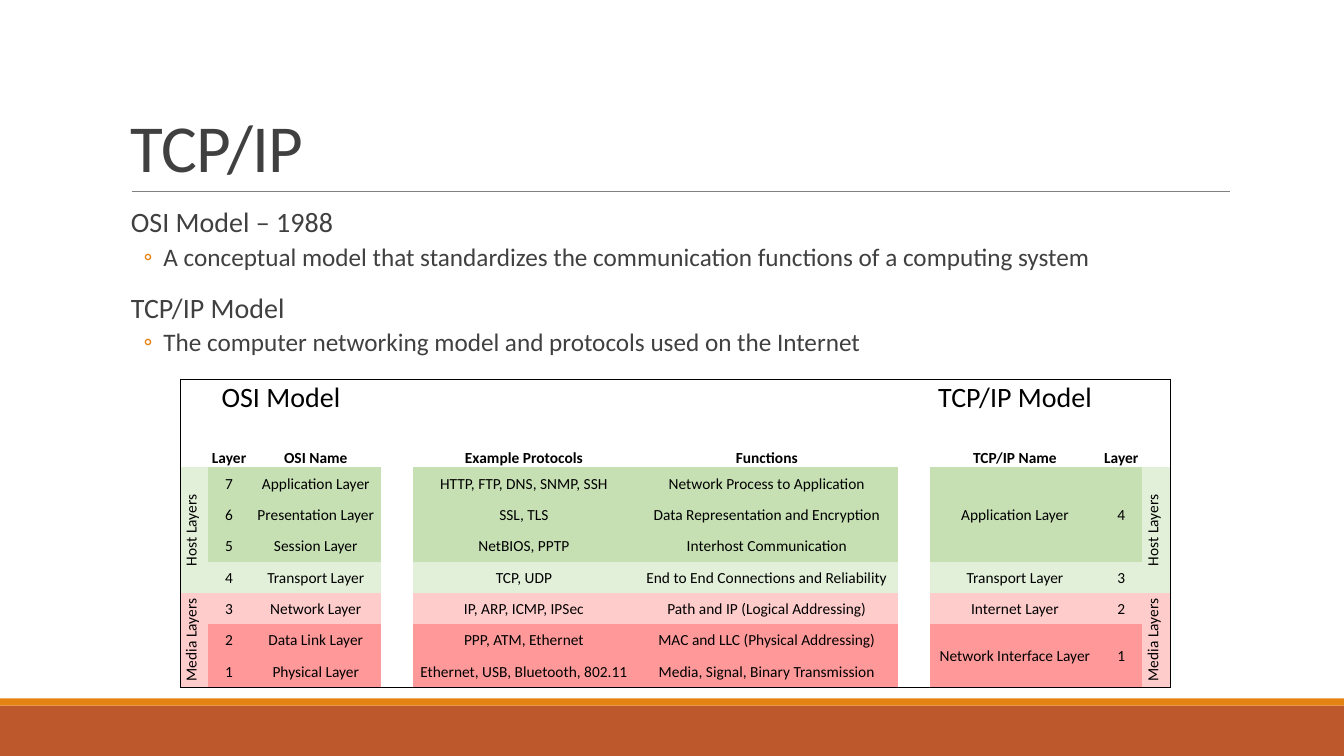
import lxml.etree
import pptx
import pptx.dml.color
import pptx.enum.shapes
import pptx.enum.text
import pptx.oxml.ns
import pptx.util

Cm, Pt, qn = pptx.util.Cm, pptx.util.Pt, pptx.oxml.ns.qn
ANCHOR, ALIGN = pptx.enum.text.MSO_ANCHOR, pptx.enum.text.PP_ALIGN

FONT = "Calibri"
COLORS = {
    "footer": "BD582C", "accent": "E48312", "rule": "808080",
    "text": "404040", "table": "000000",
    "host": "C6E0B4", "host light": "E2EFD9",
    "media light": "FFCCCC", "media": "FF9999",
}
TITLE = "TCP/IP"
BODY = [
    ("OSI Model – 1988",
     "A conceptual model that standardizes the communication functions of a computing system"),
    ("TCP/IP Model",
     "The computer networking model and protocols used on the Internet"),
]

# Table columns: side label, OSI part, gap, details, gap, TCP/IP part, side label
COL_WIDTHS = [0.69, 1.07, 3.3, 0.79, 5.61, 6.63, 0.79, 4.3, 1.06, 0.71]
HEAD_HEIGHTS = [0.91, 0.53, 0.79]
LAYER_HEIGHT = 0.79
MODEL_NAMES = {0: "OSI Model", 7: "TCP/IP Model"}
HEADINGS = {1: "Layer", 2: "OSI Name", 4: "Example Protocols",
            5: "Functions", 7: "TCP/IP Name", 8: "Layer"}
OSI_LAYERS = [  # name, protocols, function, band
    ("Application Layer", "HTTP, FTP, DNS, SNMP, SSH", "Network Process to Application", "host"),
    ("Presentation Layer", "SSL, TLS", "Data Representation and Encryption", "host"),
    ("Session Layer", "NetBIOS, PPTP", "Interhost Communication", "host"),
    ("Transport Layer", "TCP, UDP", "End to End Connections and Reliability", "host light"),
    ("Network Layer", "IP, ARP, ICMP, IPSec", "Path and IP (Logical Addressing)", "media light"),
    ("Data Link Layer", "PPP, ATM, Ethernet", "MAC and LLC (Physical Addressing)", "media"),
    ("Physical Layer", "Ethernet, USB, Bluetooth, 802.11", "Media, Signal, Binary Transmission", "media"),
]
TCP_LAYERS = [  # name, OSI layers covered, band
    ("Application Layer", 3, "host"),
    ("Transport Layer", 1, "host light"),
    ("Internet Layer", 1, "media light"),
    ("Network Interface Layer", 2, "media"),
]
SIDES = [("Host Layers", 4, "host light"), ("Media Layers", 3, "media light")]


def rgb(name):
    return pptx.dml.color.RGBColor.from_string(COLORS[name])


def add_run(p, text, size, color, bold=False):
    r = p.add_run()
    r.text = text
    r.font.name, r.font.size, r.font.bold = FONT, Pt(size), bold
    r.font.color.rgb = rgb(color)
    return r


def add_bar(s, top, height, color):
    sp = s.shapes.add_shape(pptx.enum.shapes.MSO_SHAPE.RECTANGLE,
                            0, Cm(top), Cm(33.87), Cm(height))
    sp.shadow.inherit = False
    sp.fill.solid()
    sp.fill.fore_color.rgb = rgb(color)
    sp.line.fill.background()


def add_rule(s):
    line = s.shapes.add_connector(pptx.enum.shapes.MSO_CONNECTOR.STRAIGHT,
                                  Cm(3.32), Cm(4.82), Cm(31), Cm(4.82))
    line.line.color.rgb = rgb("rule")
    line.line.width = Pt(0.5)
    lxml.etree.SubElement(line._element.spPr, qn("a:effectLst"))


def add_title(s):
    tf = s.shapes.add_textbox(Cm(3.05), Cm(0.79), Cm(27.94), Cm(4.03)).text_frame
    tf.word_wrap = True
    tf.vertical_anchor = ANCHOR.BOTTOM
    p = tf.paragraphs[0]
    p.line_spacing = 0.85
    r = add_run(p, TITLE, 48, "text")
    r.font._element.set("spc", "-50")


def add_body_line(p, text, size, before, after, left, bullet=None):
    p.line_spacing = 0.9
    p.space_before, p.space_after = Pt(before), Pt(after)
    add_run(p, text, size, "text")
    pPr = p._p.get_or_add_pPr()
    pPr.set("marL", str(Cm(left)))
    if bullet:
        pPr.set("indent", str(Cm(-0.5)))
        color = lxml.etree.SubElement(pPr, qn("a:buClr"))
        lxml.etree.SubElement(color, qn("a:srgbClr"), val=COLORS["accent"])
        lxml.etree.SubElement(pPr, qn("a:buFont"), typeface=FONT)
        lxml.etree.SubElement(pPr, qn("a:buChar"), char=bullet)


def add_body(s):
    tf = s.shapes.add_textbox(Cm(3.05), Cm(5.13), Cm(27.94), Cm(11.18)).text_frame
    tf.word_wrap = True
    tf.margin_left = tf.margin_right = 0
    p = tf.paragraphs[0]
    for i, (heading, detail) in enumerate(BODY):
        if i:
            p = tf.add_paragraph()
        add_body_line(p, heading, 20, 12, 2, 0.25)
        add_body_line(tf.add_paragraph(), detail, 18, 2, 4, 1.07, "◦")


def fill_cell(cell, text, band=None, size=11, bold=False, anchor=ANCHOR.MIDDLE):
    cell.vertical_anchor = anchor
    p = cell.text_frame.paragraphs[0]
    p.alignment = ALIGN.CENTER
    add_run(p, text, size, "table", bold)
    if band:
        cell.fill.solid()
        cell.fill.fore_color.rgb = rgb(band)


def fill_blocks(tbl, col, blocks, vertical=False):
    """Stack (text, row count, band) blocks down one column, merging rows."""
    row = len(HEAD_HEIGHTS)
    for text, count, band in blocks:
        cell = tbl.cell(row, col)
        if count > 1:
            cell.merge(tbl.cell(row + count - 1, col))
        fill_cell(cell, text, band)
        if vertical:
            cell._tc.get_or_add_tcPr().set("vert", "vert270")
        row += count


def finish_cells(tbl):
    """Set margins, keep empty cells low and frame the whole table."""
    last_row, last_col = len(tbl.rows) - 1, len(tbl.columns) - 1
    for row in range(last_row + 1):
        for col in range(last_col + 1):
            cell = tbl.cell(row, col)
            cell.margin_left = cell.margin_right = cell.margin_top = Cm(0.03)
            cell.margin_bottom = 0
            p = cell.text_frame.paragraphs[0]
            if not p.runs:
                lxml.etree.SubElement(p._p, qn("a:endParaRPr"), sz="800")
            edges = {"L": col == 0, "R": col == last_col, "T": row == 0,
                     "B": row + cell.span_height - 1 == last_row}
            tcPr = cell._tc.get_or_add_tcPr()
            for i, side in enumerate(e for e in edges if edges[e]):
                ln = lxml.etree.Element(qn("a:ln" + side), w=str(Pt(0.5)))
                fill = lxml.etree.SubElement(ln, qn("a:solidFill"))
                lxml.etree.SubElement(fill, qn("a:srgbClr"), val=COLORS["table"])
                tcPr.insert(i, ln)


def add_models_table(s):
    heights = HEAD_HEIGHTS + [LAYER_HEIGHT] * len(OSI_LAYERS)
    tbl = s.shapes.add_table(len(heights), len(COL_WIDTHS), Cm(4.55), Cm(9.55),
                             Cm(sum(COL_WIDTHS)), Cm(sum(heights))).table
    tbl.first_row = tbl.horz_banding = False
    style = tbl._tbl.tblPr.find(qn("a:tableStyleId"))
    style.text = "{2D5ABB26-0587-4C30-8999-92F81FD0307C}"
    for column, width in zip(tbl.columns, COL_WIDTHS):
        column.width = Cm(width)
    for row, height in zip(tbl.rows, heights):
        row.height = Cm(height)

    tbl.cell(0, 0).merge(tbl.cell(0, 2))
    for col, text in MODEL_NAMES.items():
        fill_cell(tbl.cell(0, col), text, size=20, anchor=ANCHOR.BOTTOM)
    for col, text in HEADINGS.items():
        fill_cell(tbl.cell(2, col), text, bold=True, anchor=ANCHOR.BOTTOM)
    for i, (name, protocols, function, band) in enumerate(OSI_LAYERS):
        number = str(len(OSI_LAYERS) - i)
        for col, text in zip((1, 2, 4, 5), (number, name, protocols, function)):
            fill_cell(tbl.cell(len(HEAD_HEIGHTS) + i, col), text, band)
    fill_blocks(tbl, 7, TCP_LAYERS)
    fill_blocks(tbl, 8, [(str(len(TCP_LAYERS) - i), count, band)
                         for i, (_, count, band) in enumerate(TCP_LAYERS)])
    for col in (0, len(COL_WIDTHS) - 1):
        fill_blocks(tbl, col, SIDES, vertical=True)
    finish_cells(tbl)


def main():
    prs = pptx.Presentation()
    prs.slide_width, prs.slide_height = Cm(33.87), Cm(19.05)
    s = prs.slides.add_slide(prs.slide_layouts[6])
    add_bar(s, 17.78, 1.27, "footer")
    add_bar(s, 17.6, 0.18, "accent")
    add_rule(s)
    add_title(s)
    add_body(s)
    add_models_table(s)
    prs.save("out.pptx")


if __name__ == "__main__":
    main()
